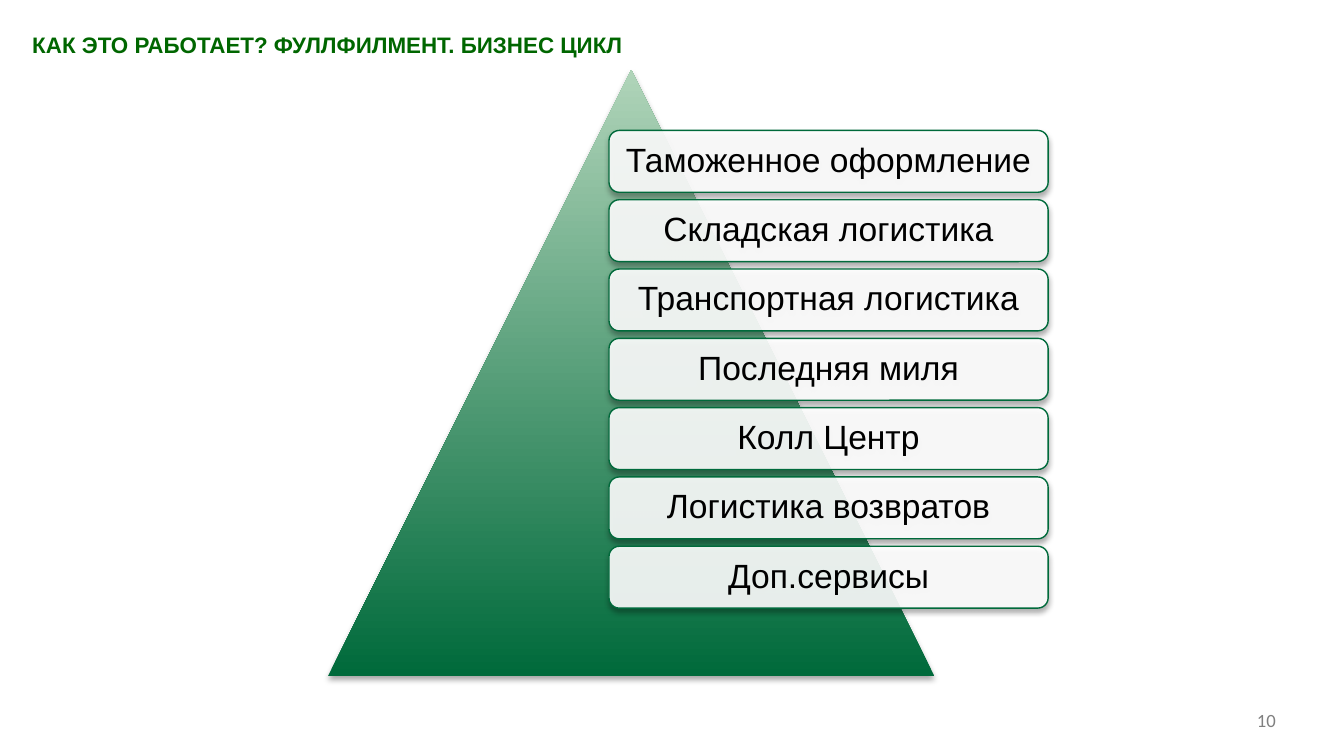
from lxml import etree
from pptx import Presentation
from pptx.dml.color import RGBColor
from pptx.enum.shapes import MSO_SHAPE
from pptx.enum.text import MSO_ANCHOR, PP_ALIGN
from pptx.oxml.ns import qn
from pptx.util import Cm, Pt

TRIANGLE = MSO_SHAPE.ISOSCELES_TRIANGLE
ROUNDED = MSO_SHAPE.ROUNDED_RECTANGLE
LEFT, CENTER, RIGHT = PP_ALIGN.LEFT, PP_ALIGN.CENTER, PP_ALIGN.RIGHT
TOP, MIDDLE = MSO_ANCHOR.TOP, MSO_ANCHOR.MIDDLE

GREEN, PALE_GREEN, TITLE_GREEN = "006A3B", "B0D4B9", "006600"
WHITE, BLACK, GRAY = "FFFFFF", "000000", "808080"

SERVICES = [
    "Таможенное оформление",
    "Складская логистика",
    "Транспортная логистика",
    "Последняя миля",
    "Колл Центр",
    "Логистика возвратов",
    "Доп.сервисы",
]


def rgb(color):
    return RGBColor.from_string(color)


def set_alpha(color_element, percent):
    etree.SubElement(color_element, qn("a:alpha"), val=str(percent * 1000))


def add_shadow(sp):
    """Give a shape a soft shadow that falls straight down."""
    sp.shadow.inherit = False
    effects = sp._element.spPr.find(qn("a:effectLst"))
    shadow = etree.SubElement(
        effects, qn("a:outerShdw"), blurRad=str(Pt(3.1)), dist=str(Pt(1.8)),
        dir="5400000", rotWithShape="0")
    set_alpha(etree.SubElement(shadow, qn("a:srgbClr"), val=BLACK), 35)


def set_text(sp, text, size, color, align, anchor, font="Arial", bold=False):
    tf = sp.text_frame
    tf.word_wrap = True
    tf.vertical_anchor = anchor
    tf.text = text
    p = tf.paragraphs[0]
    p.alignment = align
    r = p.runs[0]
    r.font.name, r.font.size, r.font.bold = font, Pt(size), bold
    r.font.color.rgb = rgb(color)


def add_label(s, box, *args, **kwargs):
    set_text(s.shapes.add_textbox(*map(Cm, box)), *args, **kwargs)


def add_service(group, box, text):
    """One translucent rounded box with its service name."""
    sp = group.shapes.add_shape(ROUNDED, *map(Cm, box))
    sp.fill.solid()
    sp.fill.fore_color.rgb = rgb(WHITE)
    set_alpha(sp._element.spPr.find(qn("a:solidFill"))[0], 90)
    sp.line.color.rgb = rgb(GREEN)
    sp.line.width = Pt(0.75)
    add_shadow(sp)
    set_text(sp, text, 18, BLACK, CENTER, MIDDLE)
    tf = sp.text_frame
    tf.margin_left = tf.margin_right = Cm(0.18)
    tf.margin_top = tf.margin_bottom = Cm(0.18)
    tf.paragraphs[0].line_spacing = 0.9


def add_pyramid(s, box, services):
    """Triangle with the services stacked from its middle axis rightwards."""
    left, top, width, height = box
    group = s.shapes.add_group_shape()

    # Triangle, dark at the base
    sp = group.shapes.add_shape(TRIANGLE, *map(Cm, box))
    sp.fill.gradient()
    sp.fill.gradient_angle = 90
    for stop, position, color in zip(sp.fill.gradient_stops, (0, 1), (GREEN, PALE_GREEN)):
        stop.position = position
        stop.color.rgb = rgb(color)
    sp.line.fill.background()
    add_shadow(sp)

    # Service boxes at an equal pitch
    box_width, box_height, pitch = 8.3, 1.17, 1.31
    box_left = left + width / 2 - 0.42
    first_top = top + height * 0.1
    for i, text in enumerate(services):
        add_service(group, (box_left, first_top + i * pitch, box_width, box_height), text)


def main():
    prs = Presentation()
    prs.slide_width, prs.slide_height = Cm(25.4), Cm(14.29)
    s = prs.slides.add_slide(prs.slide_layouts[6])

    # Page number
    add_label(s, (21.26, 13.23, 3.1, 0.76), "10", 10, GRAY, RIGHT, MIDDLE, font="Calibri")
    # Title
    add_label(s, (0.36, 0.46, 17.25, 1.27), "КАК ЭТО РАБОТАЕТ? ФУЛЛФИЛМЕНТ. БИЗНЕС ЦИКЛ",
              12, TITLE_GREEN, LEFT, TOP, bold=True)
    # Business cycle
    add_pyramid(s, (6.2, 1.32, 11.46, 11.46), SERVICES)

    prs.save("out.pptx")


if __name__ == "__main__":
    main()
